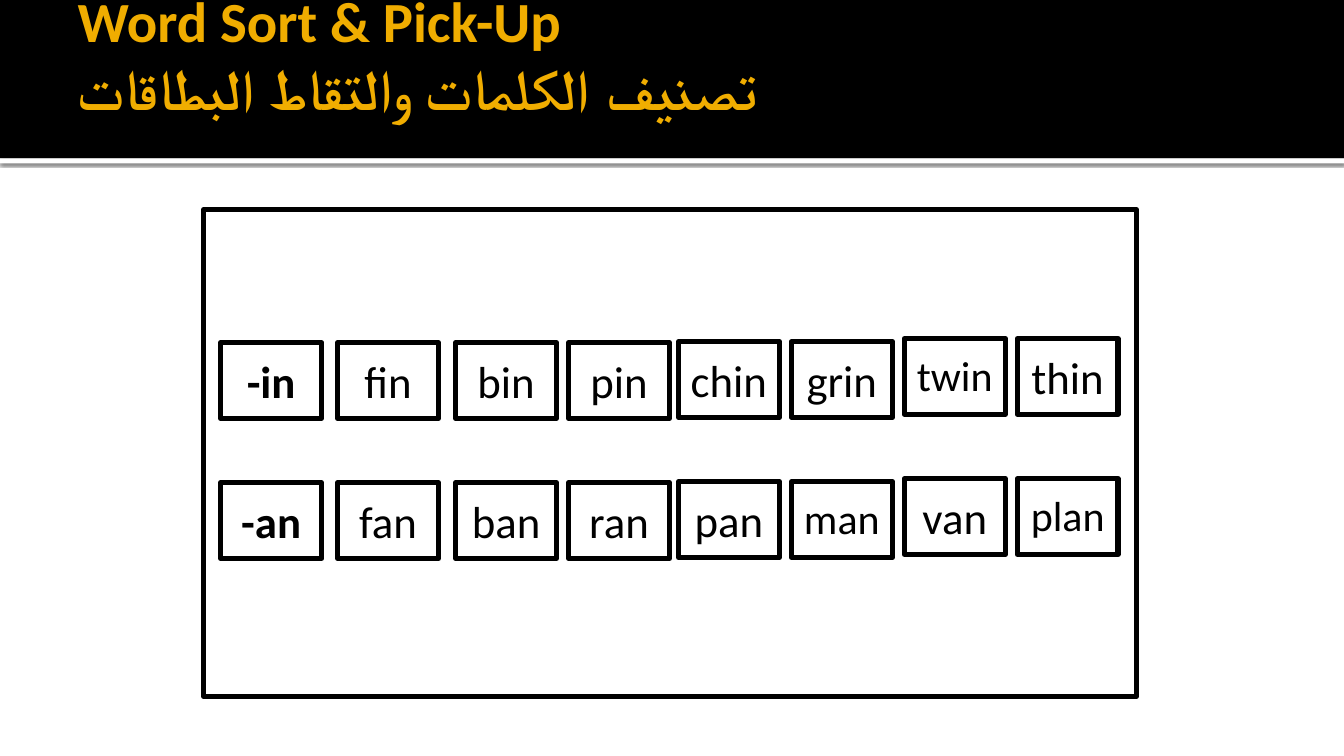
from lxml import etree
from pptx import Presentation
from pptx.dml.color import RGBColor
from pptx.enum.shapes import MSO_SHAPE as SHAPE
from pptx.enum.text import MSO_ANCHOR as ANCHOR, MSO_AUTO_SIZE as AUTO, PP_ALIGN as ALIGN
from pptx.oxml import parse_xml
from pptx.oxml.ns import nsdecls, qn
from pptx.util import Inches, Pt

BLACK, WHITE, GOLD = "000000", "FFFFFF", "F0AD00"
CARD_W, CARD_H = 1, 0.75
COLUMN_LEFTS = [2.19, 3.35, 4.52, 5.64, 6.73, 7.85, 8.97, 10.09]
COLUMN_DROPS = [0.04, 0.04, 0.04, 0.04, 0.03, 0.03, 0, 0]
WORD_ROWS = [
    (3.36, ["-in", "fin", "bin", "pin", "chin", "grin", "twin", "thin"]),
    (4.75, ["-an", "fan", "ban", "ran", "pan", "man", "van", "plan"]),
]
SMALLER_WORDS = {"twin", "man", "plan"}


def rgb(color):
    return RGBColor.from_string(color)


def add_rect(s, x, y, w, h, fill=None, line=None):
    sp = s.shapes.add_shape(SHAPE.RECTANGLE, Inches(x), Inches(y), Inches(w), Inches(h))
    sp.shadow.inherit = False
    if fill:
        sp.fill.solid()
        sp.fill.fore_color.rgb = rgb(fill)
    else:
        sp.fill.background()
    if line:
        sp.line.color.rgb = rgb(line)
        sp.line.width = Pt(3.78)
    else:
        sp.line.fill.background()
    return sp


def add_drop_shadow(sp):
    effects = sp._element.spPr.find(qn("a:effectLst"))
    effects.append(parse_xml(
        f'<a:outerShdw {nsdecls("a")} blurRad="{Pt(2.5)}" dist="{Pt(0.8)}" dir="5400000" '
        'algn="t" rotWithShape="0"><a:srgbClr val="000000"><a:alpha val="60000"/>'
        '</a:srgbClr></a:outerShdw>'))


def add_header(s):
    strip = add_rect(s, 0, 1.57, 13.33, 0.05, fill=WHITE)
    add_drop_shadow(strip)
    add_rect(s, 0, 0, 13.33, 1.57, fill=BLACK)


def set_title(s, english, arabic):
    title = s.shapes.title
    s.shapes._spTree.append(title._element)  # in front of the header bar
    title.left, title.top = Inches(0.67), Inches(0.17)
    title.width, title.height = Inches(12), Inches(1.37)
    tf = title.text_frame
    tf.auto_size = AUTO.NONE
    tf.vertical_anchor = ANCHOR.MIDDLE
    tf.margin_left, tf.margin_right = Inches(0.1), Inches(0.05)
    tf.margin_top, tf.margin_bottom = Inches(0.05), Inches(0.7)
    p = tf.paragraphs[0]
    p.alignment = ALIGN.LEFT
    p.font.size, p.font.bold = Pt(40.5), True
    p.font.color.rgb = rgb(GOLD)
    r = p.add_run()
    r.text, r.font.name = english, "Calibri"
    p.add_line_break()
    r = p.add_run()
    r.text, r.font.name = arabic, "Arial"
    etree.SubElement(r.font._element, qn("a:cs"), typeface="Arial")


def add_card(s, x, y, word):
    add_rect(s, x, y, CARD_W, CARD_H, line=BLACK)
    small = word in SMALLER_WORDS
    label = s.shapes.add_textbox(Inches(x), Inches(y + 0.06), Inches(CARD_W),
                                 Inches(0.61 if small else 0.64))
    tf = label.text_frame
    tf.word_wrap = True
    tf.auto_size = AUTO.SHAPE_TO_FIT_TEXT
    p = tf.paragraphs[0]
    p.text, p.alignment = word, ALIGN.CENTER
    p.font.name, p.font.size = "Calibri", Pt(30 if small else 32)
    p.font.bold = word.startswith("-")
    p.font.color.rgb = rgb(BLACK)


def main():
    prs = Presentation()
    prs.slide_width, prs.slide_height = Inches(13.33), Inches(7.5)
    s = prs.slides.add_slide(prs.slide_layouts[5])
    add_header(s)
    set_title(s, "Word Sort & Pick-Up", "تصنيف الكلمات والتقاط البطاقات")
    add_rect(s, 2.02, 2.08, 9.25, 4.83, line=BLACK)
    for top, words in WORD_ROWS:
        for x, drop, word in zip(COLUMN_LEFTS, COLUMN_DROPS, words):
            add_card(s, x, top + drop, word)
    prs.save("out.pptx")


if __name__ == "__main__":
    main()
